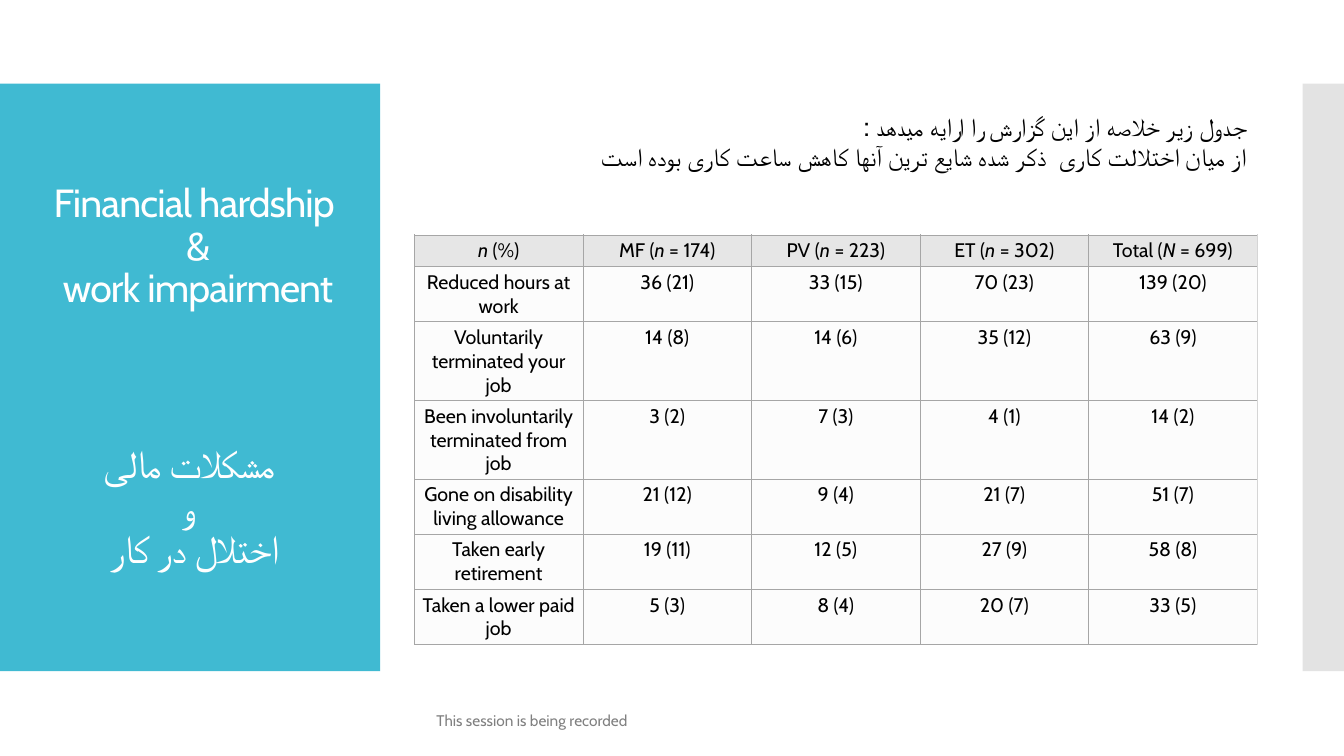
from lxml.etree import SubElement
from pptx import Presentation
from pptx.dml.color import RGBColor
from pptx.enum.shapes import MSO_SHAPE
from pptx.enum.text import MSO_ANCHOR, MSO_AUTO_SIZE, PP_ALIGN
from pptx.oxml.ns import qn
from pptx.util import Inches, Pt

TEAL = RGBColor(0x40, 0xBA, 0xD2)
SILVER = RGBColor(0xC8, 0xC8, 0xC8)
WHITE = RGBColor(0xFF, 0xFF, 0xFF)
BLACK = RGBColor(0x00, 0x00, 0x00)
GREY = RGBColor(0x80, 0x80, 0x80)
HEADER_FILL = RGBColor(0xE6, 0xE6, 0xE6)
BODY_FILL = RGBColor(0xFC, 0xFC, 0xFC)
BORDER = RGBColor(0xA6, 0xA6, 0xA6)
EDGE = RGBColor(0xD5, 0xD5, 0xD5)

HEADERS = [
    ("", "n", "\u00a0(%)"),
    ("MF (", "n", " = 174)"),
    ("PV (", "n", " = 223)"),
    ("ET (", "n", " = 302)"),
    ("Total (", "N", " = 699)"),
]
ROWS = [
    ("Reduced hours at work", "36 (21)", "33 (15)", "70 (23)", "139 (20)"),
    ("Voluntarily terminated your job", "14 (8)", "14 (6)", "35 (12)", "63 (9)"),
    ("Been involuntarily terminated from job", "3 (2)", "7 (3)", "4 (1)", "14 (2)"),
    ("Gone on disability living allowance", "21 (12)", "9 (4)", "21 (7)", "51 (7)"),
    ("Taken early retirement", "19 (11)", "12 (5)", "27 (9)", "58 (8)"),
    ("Taken a lower paid job", "5 (3)", "8 (4)", "20 (7)", "33 (5)"),
]
ROW_HEIGHTS = [0.28, 0.49, 0.7, 0.7, 0.49, 0.49, 0.49]


class SlideBuilder:
    font = "Cabin"

    def __init__(self, slide):
        self.s = slide

    def style(self, p, size, color, align):
        p.font.name = self.font
        p.font.size = Pt(size)
        p.font.color.rgb = color
        p.alignment = align

    def panel(self, x, y, w, h, color, opacity=100):
        sp = self.s.shapes.add_shape(
            MSO_SHAPE.RECTANGLE, Inches(x), Inches(y), Inches(w), Inches(h))
        sp.shadow.inherit = False
        sp.fill.solid()
        sp.fill.fore_color.rgb = color
        sp.line.fill.background()
        if opacity < 100:
            clr = sp.fill._xPr.find(qn("a:solidFill"))[0]
            SubElement(clr, qn("a:alpha"), val=str(opacity * 1000))

    def text(self, box, lines, size, color, align=PP_ALIGN.LEFT,
             anchor=MSO_ANCHOR.MIDDLE, title=False, rtl=False, grow=False):
        sp = self.s.shapes.add_textbox(*map(Inches, box))
        tf = sp.text_frame
        tf.word_wrap = True
        tf.vertical_anchor = anchor
        if grow:
            tf.auto_size = MSO_AUTO_SIZE.SHAPE_TO_FIT_TEXT
        for i, line in enumerate(lines):
            p = tf.add_paragraph() if i else tf.paragraphs[0]
            p.text = line
            self.style(p, size, color, align)
            if title:
                p.line_spacing = 0.9
                p.font._rPr.set("spc", "-60")
            if rtl:
                p._p.get_or_add_pPr().set("rtl", "1")

    def cell(self, cell, parts, fill, right_edge):
        cell.margin_left = cell.margin_right = Inches(0.04)
        cell.margin_top = cell.margin_bottom = Inches(0.04)
        p = cell.text_frame.paragraphs[0]
        self.style(p, 14, BLACK, PP_ALIGN.CENTER)
        for i, part in enumerate(parts):
            if part:
                r = p.add_run()
                r.text = part
                r.font.italic = i == 1
        tc_pr = cell._tc.get_or_add_tcPr()
        for side, color in zip("LRTB", (BORDER, right_edge, BORDER, BORDER)):
            ln = SubElement(tc_pr, qn(f"a:ln{side}"), w=str(Pt(0.6)))
            SubElement(SubElement(ln, qn("a:solidFill")), qn("a:srgbClr"), val=str(color))
        cell.fill.solid()
        cell.fill.fore_color.rgb = fill

    def table(self, x, y, w, headers, rows, heights):
        grid = [headers] + [[(value,) for value in row] for row in rows]
        table = self.s.shapes.add_table(
            len(grid), len(headers), Inches(x), Inches(y),
            Inches(w), Inches(sum(heights))).table
        table.first_row = False
        table.horz_banding = False
        for row, height in zip(table.rows, heights):
            row.height = Inches(height)
        for i, row in enumerate(grid):
            for j, parts in enumerate(row):
                self.cell(table.cell(i, j), parts,
                          BODY_FILL if i else HEADER_FILL,
                          EDGE if j == len(headers) - 1 else BORDER)


def main():
    prs = Presentation()
    prs.slide_width = Inches(13.33)
    prs.slide_height = Inches(7.5)
    s = SlideBuilder(prs.slides.add_slide(prs.slide_layouts[6]))

    s.panel(0, 0.83, 3.77, 5.83, TEAL)
    s.panel(12.92, 0.83, 0.41, 5.83, SILVER, opacity=50)
    s.text((0.1, 0.56, 3.65, 3.79), ["Financial hardship\v &\v work impairment"],
           28, WHITE, PP_ALIGN.CENTER, title=True)
    s.table(4.11, 2.33, 8.36, HEADERS, ROWS, ROW_HEIGHTS)
    s.text((0.1, 3.15, 3.65, 3.79), ["مشکلات مالی ", "و ", "اختلال در کار"],
           28, WHITE, PP_ALIGN.CENTER, title=True)
    s.text((1.64, 1.05, 10.83, 0.71),
           ["جدول زیر خلاصه از این گزارش را ارایه میدهد :",
            "از میان اختلالت کاری  ذکر شده شایع ترین آنها کاهش ساعت کاری بوده است "],
           18, BLACK, PP_ALIGN.RIGHT, MSO_ANCHOR.TOP, rtl=True, grow=True)
    s.text((4.23, 6.95, 6.46, 0.4), ["This session is being recorded"], 11, GREY)

    prs.save("out.pptx")


if __name__ == "__main__":
    main()
